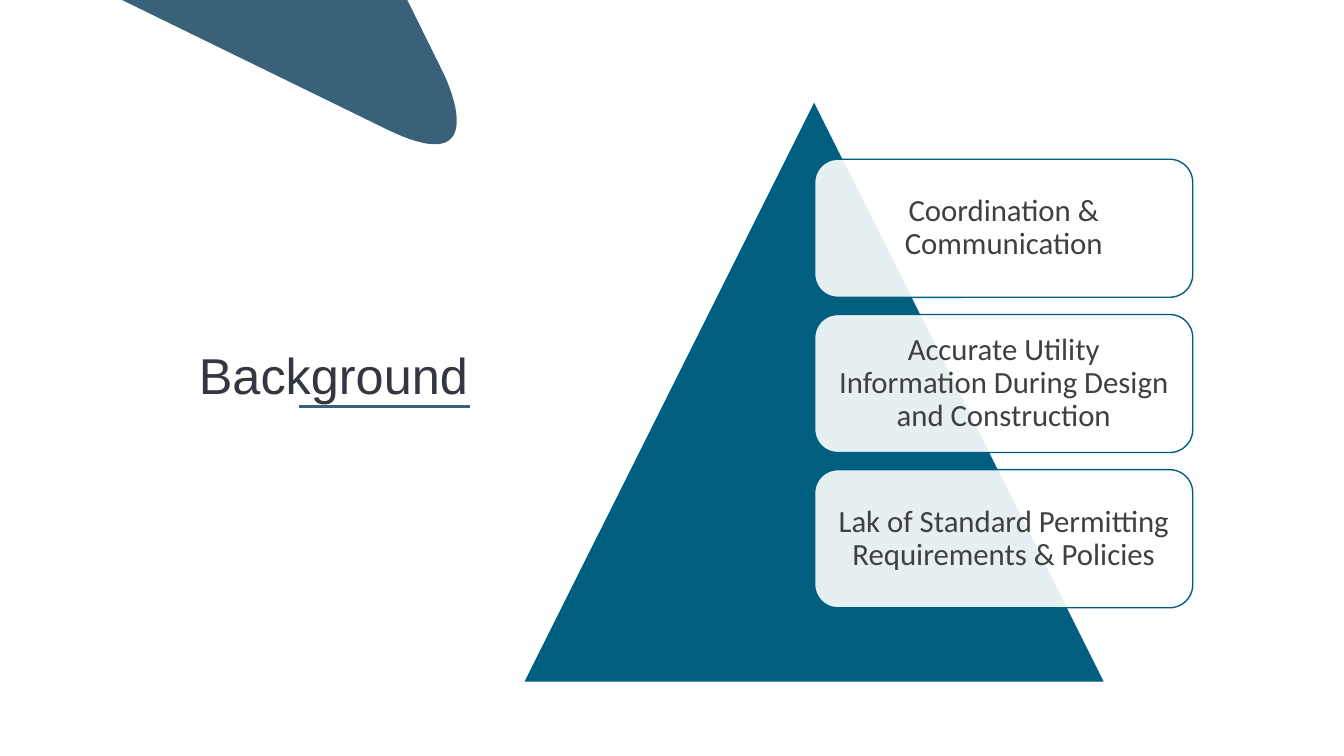
from dataclasses import dataclass

from lxml.etree import SubElement
from pptx import Presentation
from pptx.dml.color import RGBColor
from pptx.enum.shapes import MSO_CONNECTOR, MSO_SHAPE
from pptx.enum.text import MSO_ANCHOR, PP_ALIGN
from pptx.oxml.ns import qn
from pptx.shapes.autoshape import Shape
from pptx.slide import Slide
from pptx.text.text import TextFrame
from pptx.util import Pt

EMU_PER_PX = 9144  # 100 px to the inch
COLORS = {
    "title": "343741",
    "accent": "3A617A",
    "pyramid": "005F7F",
    "white": "FFFFFF",
    "card_text": "404041",
}
CARD_TEXTS = [
    "Coordination & Communication",
    "Accurate Utility Information During Design and Construction",
    "Lak of Standard Permitting Requirements & Policies",
]
CARD_LEFT, CARD_TOP, CARD_WIDTH, CARD_HEIGHT = 808, 158, 375, 137
CARD_STEP = 154
CARD_INSET = 9
CARD_OPACITY = 90
CURVE_STEPS = 40

Point = tuple[float, float]


@dataclass(frozen=True)
class Box:
    left: int
    top: int
    width: int
    height: int

    def emu(self) -> tuple[int, int, int, int]:
        return px(self.left), px(self.top), px(self.width), px(self.height)


@dataclass(frozen=True)
class Card:
    text: str
    box: Box


def px(length: float) -> int:
    return round(length * EMU_PER_PX)


def color(name: str) -> RGBColor:
    return RGBColor.from_string(COLORS[name])


def paint(shape: Shape, fill: str, line: str | None = None) -> None:
    shape.shadow.inherit = False
    shape.fill.solid()
    shape.fill.fore_color.rgb = color(fill)
    if line is None:
        shape.line.fill.background()
    else:
        shape.line.color.rgb = color(line)
        shape.line.width = Pt(1)


def set_fill_opacity(shape: Shape, percent: int) -> None:
    fill_color = shape.fill._xPr.find(qn("a:solidFill")).find(qn("a:srgbClr"))
    SubElement(fill_color, qn("a:alpha")).set("val", str(percent * 1000))


def write_text(frame: TextFrame, text: str, align: PP_ALIGN, font_name: str,
               size: int, color_name: str) -> None:
    frame.word_wrap = True
    frame.vertical_anchor = MSO_ANCHOR.MIDDLE
    frame.text = text
    paragraph = frame.paragraphs[0]
    paragraph.alignment = align
    paragraph.line_spacing = 0.9
    font = paragraph.runs[0].font
    font.name = font_name
    font.size = Pt(size)
    font.color.rgb = color(color_name)


def curve_points(start: Point, control_1: Point, control_2: Point, end: Point) -> list[Point]:
    """Sample a cubic Bezier curve, its start left out."""
    points = []
    for step in range(1, CURVE_STEPS + 1):
        t = step / CURVE_STEPS
        weights = ((1 - t) ** 3, 3 * t * (1 - t) ** 2, 3 * t ** 2 * (1 - t), t ** 3)
        corners = (start, control_1, control_2, end)
        points.append((sum(w * x for w, (x, _) in zip(weights, corners)),
                       sum(w * y for w, (_, y) in zip(weights, corners))))
    return points


def add_corner_petal(slide: Slide) -> None:
    side, tip = (440, 73), (385, 129)
    outline = [(404, 0), (121, 0), tip, *curve_points(tip, (493, 181), side, side)]
    builder = slide.shapes.build_freeform(px(side[0]), px(side[1]), scale=1.0)
    builder.add_line_segments([(px(x), px(y)) for x, y in outline], close=True)
    paint(builder.convert_to_shape(), "accent")


def add_title(slide: Slide, text: str, box: Box) -> None:
    title = slide.shapes.add_textbox(*box.emu())
    write_text(title.text_frame, text, PP_ALIGN.RIGHT, "Arial", 36, "title")


def add_underline(slide: Slide, left: int, right: int, y: int) -> None:
    underline = slide.shapes.add_connector(
        MSO_CONNECTOR.STRAIGHT, px(left), px(y), px(right), px(y))
    underline.line.color.rgb = color("accent")
    underline.line.width = Pt(2.25)
    SubElement(underline._element.spPr, qn("a:effectLst"))


def add_pyramid(slide: Slide, box: Box) -> None:
    pyramid = slide.shapes.add_shape(MSO_SHAPE.ISOSCELES_TRIANGLE, *box.emu())
    paint(pyramid, "pyramid", "white")


def add_card(slide: Slide, card: Card) -> None:
    shape = slide.shapes.add_shape(MSO_SHAPE.ROUNDED_RECTANGLE, *card.box.emu())
    paint(shape, "white", "pyramid")
    set_fill_opacity(shape, CARD_OPACITY)
    frame = shape.text_frame
    frame.margin_left = frame.margin_right = px(CARD_INSET)
    frame.margin_top = frame.margin_bottom = px(CARD_INSET)
    write_text(frame, card.text, PP_ALIGN.CENTER, "Calibri", 22, "card_text")


def main() -> None:
    presentation = Presentation()
    presentation.slide_width = px(1333)
    presentation.slide_height = px(750)
    slide = presentation.slides.add_slide(presentation.slide_layouts[6])

    add_title(slide, "Background", Box(48, 0, 426, 750))
    add_underline(slide, 297, 466, 403)
    add_corner_petal(slide)
    add_pyramid(slide, Box(519, 100, 577, 577))
    for index, text in enumerate(CARD_TEXTS):
        top = CARD_TOP + index * CARD_STEP
        add_card(slide, Card(text, Box(CARD_LEFT, top, CARD_WIDTH, CARD_HEIGHT)))

    presentation.save("out.pptx")


if __name__ == "__main__":
    main()
